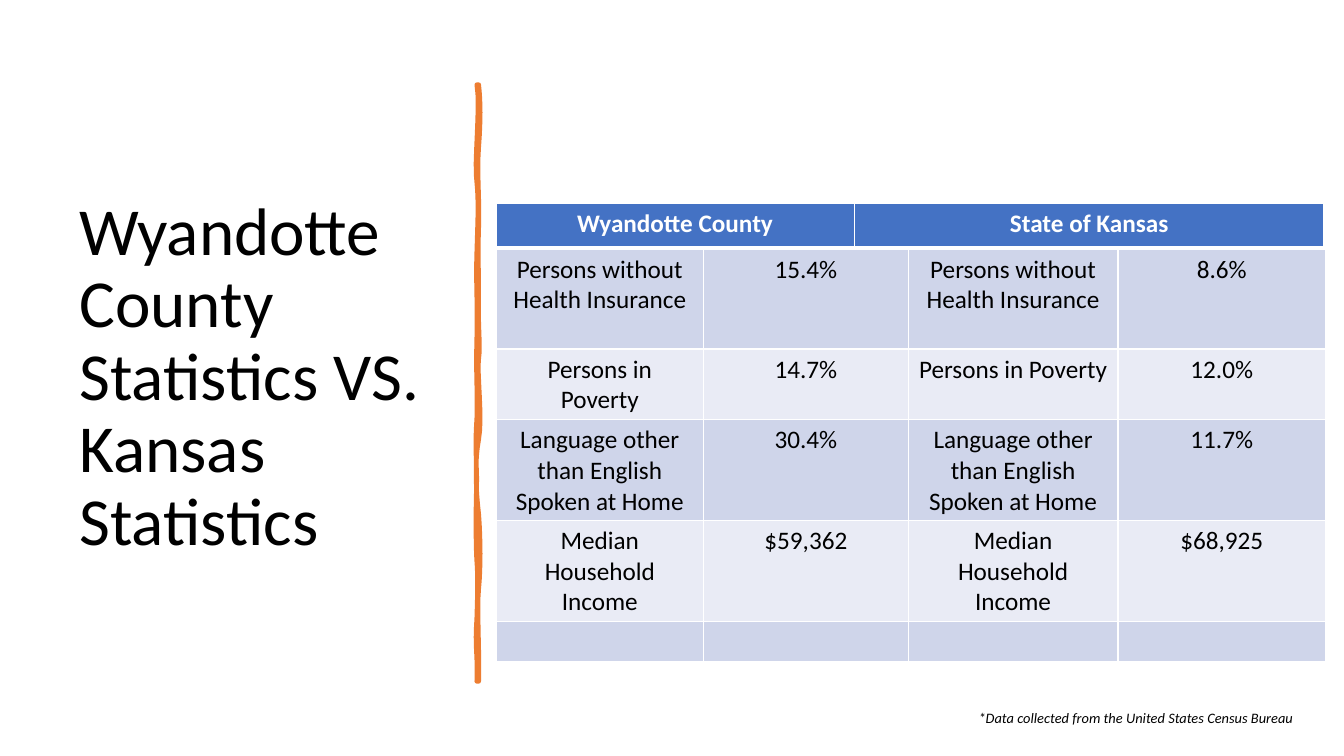
from lxml.etree import SubElement
from pptx import Presentation
from pptx.dml.color import RGBColor
from pptx.enum.text import MSO_ANCHOR as Anchor, PP_ALIGN as Align
from pptx.oxml.ns import qn
from pptx.util import Pt

FONT = "Calibri"
BLACK = RGBColor(0x00, 0x00, 0x00)
WHITE = RGBColor(0xFF, 0xFF, 0xFF)
ORANGE = RGBColor(0xED, 0x7D, 0x31)
BLUE = RGBColor(0x44, 0x72, 0xC4)
BANDS = (RGBColor(0xCF, 0xD5, 0xEA), RGBColor(0xE9, 0xEB, 0xF5))

STATISTICS = [
    ("Persons without Health Insurance", "15.4%", "8.6%"),
    ("Persons in Poverty", "14.7%", "12.0%"),
    ("Language other than English Spoken at Home", "30.4%", "11.7%"),
    ("Median Household Income", "$59,362", "$68,925"),
]
STATISTIC_WIDTHS = (148.3, 146.2, 149.8, 148.3)
STATISTIC_HEIGHTS = (71.3, 28.8, 71.3, 71.3, 28.8)
TABLE_LEFT = 354.3
HEADINGS = [
    ("Wyandotte County", TABLE_LEFT, 255.8),
    ("State of Kansas", 610.3, 335.5),
]

STROKE_RIGHT = [
    (342, 60.5),
    (343.4, 73.4), (343.4, 85.7), (342, 105.1),
    (340.6, 124.6), (342.7, 140.4), (342, 162.7),
    (341.3, 185), (342, 188.6), (342, 211.7),
    (341.3, 234), (343.4, 246.2), (342, 256.3),
    (340.6, 266.4), (344.9, 298.1), (342, 313.9),
    (339.1, 329), (339.8, 348.5), (342, 367.2),
    (343.4, 385.9), (343.4, 406.1), (342, 420.5),
    (340.6, 434.2), (342.7, 468), (342, 486.7),
]
STROKE_LEFT = [
    (340.6, 486.7),
    (341.3, 465.1), (339.1, 463.7), (340.6, 441.4),
    (341.3, 419.8), (341.3, 410.4), (340.6, 401),
    (339.8, 391.7), (339.8, 356.4), (340.6, 343.4),
    (340.6, 330.5), (339.1, 320.4), (340.6, 298.8),
    (341.3, 277.9), (339.8, 268.6), (340.6, 241.2),
    (341.3, 214.6), (339.8, 202.3), (340.6, 180),
    (341.3, 157), (342, 144), (340.6, 130.3),
    (338.4, 117.4), (343.4, 74.9), (340.6, 60.5),
]


def add_run(paragraph, text, size, color, bold=False, italic=False):
    run = paragraph.add_run()
    run.text = text
    run.font.name = FONT
    run.font.size = Pt(size)
    run.font.bold = bold
    run.font.italic = italic
    run.font.color.rgb = color


def add_text_frame(slide, left, top, width, height):
    box = slide.shapes.add_textbox(Pt(left), Pt(top), Pt(width), Pt(height))
    box.text_frame.word_wrap = True
    return box.text_frame


def add_title(slide):
    frame = add_text_frame(slide, 49.7, 50.4, 269.3, 439.9)
    frame.vertical_anchor = Anchor.MIDDLE
    title = frame.paragraphs[0]
    title.line_spacing = 0.9
    add_run(title, "Wyandotte County Statistics VS.", 48, BLACK)
    title.add_line_break()
    add_run(title, "Kansas Statistics", 48, BLACK)


def add_source_note(slide):
    note = add_text_frame(slide, 691.9, 503.3, 319, 19.4).paragraphs[0]
    note.space_after = Pt(6)
    add_run(note, "*Data collected from the United States Census Bureau",
            10.3, BLACK, italic=True)


def trace_curves(points, steps=8):
    traced = [points[0]]
    for start in range(0, len(points) - 1, 3):
        a, b, c, d = points[start:start + 4]
        for step in range(1, steps + 1):
            t = step / steps
            u = 1 - t
            traced.append(tuple(
                u**3 * p + 3 * u * u * t * q + 3 * u * t * t * r + t**3 * s
                for p, q, r, s in zip(a, b, c, d)))
    return traced


def add_brush_stroke(slide):
    outline = [(Pt(x), Pt(y)) for x, y in
               trace_curves(STROKE_RIGHT) + trace_curves(STROKE_LEFT)]
    builder = slide.shapes.build_freeform(*outline[0])
    builder.add_line_segments(outline[1:], close=True)
    stroke = builder.convert_to_shape()
    stroke.shadow.inherit = False
    stroke.fill.solid()
    stroke.fill.fore_color.rgb = ORANGE
    stroke.line.color.rgb = ORANGE
    stroke.line.width = Pt(3.25)


def set_borders(cell, bottom):
    properties = cell._tc.get_or_add_tcPr()
    for side, width in (("L", 1), ("R", 1), ("T", 1), ("B", bottom)):
        border = SubElement(properties, qn(f"a:ln{side}"), w=str(Pt(width)))
        fill = SubElement(border, qn("a:solidFill"))
        SubElement(fill, qn("a:srgbClr"), val=str(WHITE))


def fill_cell(cell, text, fill, color, bold=False, bottom=1):
    set_borders(cell, bottom)
    cell.fill.solid()
    cell.fill.fore_color.rgb = fill
    if text:
        paragraph = cell.text_frame.paragraphs[0]
        paragraph.alignment = Align.CENTER
        add_run(paragraph, text, 18, color, bold)


def add_grid(slide, left, top, widths, heights):
    grid = slide.shapes.add_table(
        len(heights), len(widths), Pt(left), Pt(top),
        Pt(sum(widths)), Pt(sum(heights))).table
    grid.first_row = False
    grid.horz_banding = False
    for column, width in zip(grid.columns, widths):
        column.width = Pt(width)
    for row, height in zip(grid.rows, heights):
        row.height = Pt(height)
    return grid


def add_statistics(slide):
    grid = add_grid(slide, TABLE_LEFT, 178, STATISTIC_WIDTHS, STATISTIC_HEIGHTS)
    rows = [(label, county, label, state) for label, county, state in STATISTICS]
    rows.append(("",) * len(STATISTIC_WIDTHS))
    for row_index, values in enumerate(rows):
        for column_index, value in enumerate(values):
            fill_cell(grid.cell(row_index, column_index), value,
                      BANDS[row_index % 2], BLACK)


def add_heading(slide, text, left, width):
    grid = add_grid(slide, left, 145.6, [width], [31.7])
    fill_cell(grid.cell(0, 0), text, BLUE, WHITE, bold=True, bottom=3)


def main():
    presentation = Presentation()
    presentation.slide_width = Pt(960)
    presentation.slide_height = Pt(540)
    slide = presentation.slides.add_slide(presentation.slide_layouts[6])
    add_title(slide)
    add_brush_stroke(slide)
    add_statistics(slide)
    for heading in HEADINGS:
        add_heading(slide, *heading)
    add_source_note(slide)
    presentation.save("out.pptx")


if __name__ == "__main__":
    main()
